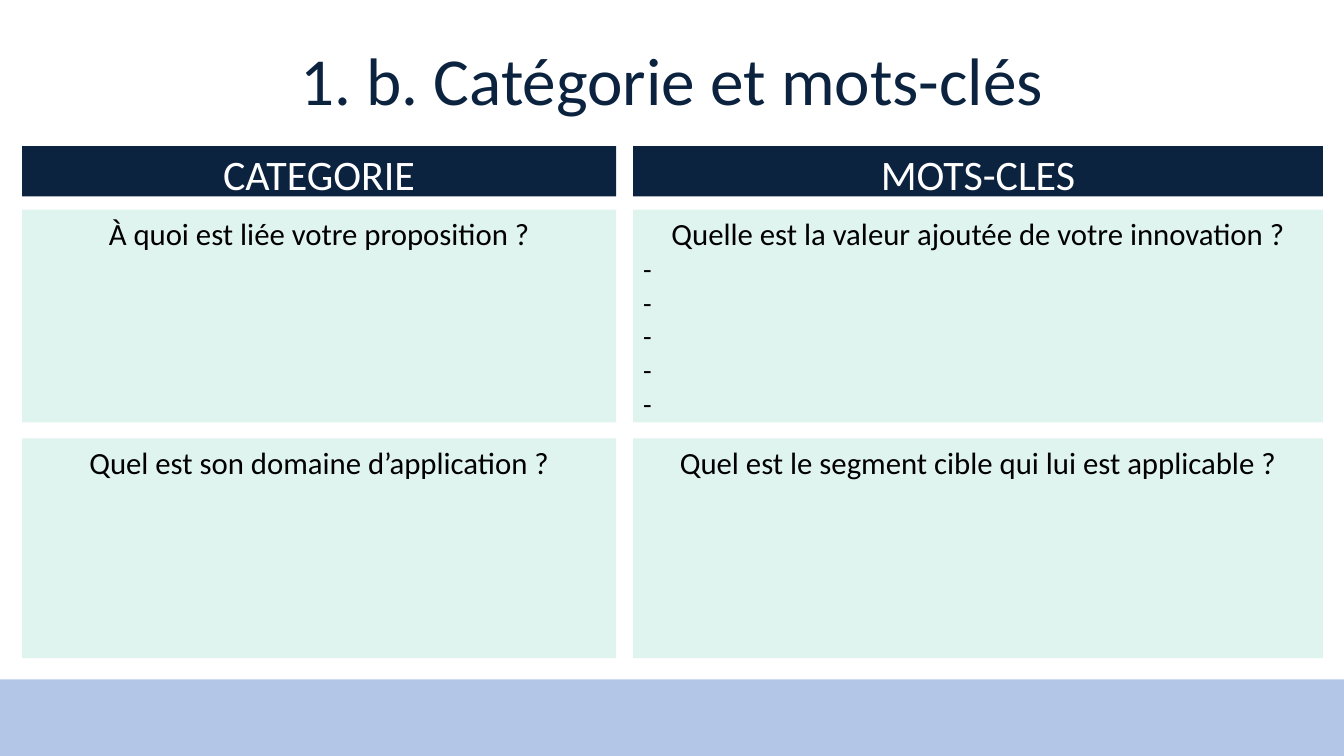
from lxml.etree import SubElement
from pptx import Presentation
from pptx.dml.color import RGBColor
from pptx.enum.shapes import MSO_SHAPE as Preset
from pptx.enum.text import MSO_ANCHOR as Anchor, MSO_AUTO_SIZE as AutoSize, PP_ALIGN as Align
from pptx.oxml.ns import qn
from pptx.util import Inches, Pt

TITLE = "1. b. Catégorie et mots-clés"
COLUMNS = [
    {"left": 0.22, "width": 5.89, "header": "CATEGORIE", "header_width": 2.7,
     "panels": [("À quoi est liée votre proposition ?", 0, 0.77),
                ("Quel est son domaine d’application ?", 0, 1.68)]},
    {"left": 6.28, "width": 6.84, "header": "MOTS-CLES", "header_width": 3.2,
     "panels": [("Quelle est la valeur ajoutée de votre innovation ?", 5, 2.15),
                ("Quel est le segment cible qui lui est applicable ?", 0, 1.18)]},
]
ROWS = [(2.08, 2.11), (4.35, 2.18)]
HEADER_TOP, HEADER_HEIGHT = 1.45, 0.5
SLIDE_WIDTH, SLIDE_HEIGHT = 13.33, 7.5
BAND_TOP = 6.74
NAVY, MINT, BLUE, WHITE, BLACK = "0C2340", "E0F4EF", "8FAADC", "FFFFFF", "000000"
FONT = "Calibri"


def color(hex_string):
    return RGBColor.from_string(hex_string)


def add_rectangle(slide, left, top, width, height, fill):
    shape = slide.shapes.add_shape(
        Preset.RECTANGLE, Inches(left), Inches(top), Inches(width), Inches(height))
    shape.shadow.inherit = False
    shape.fill.solid()
    shape.fill.fore_color.rgb = color(fill)
    shape.line.fill.background()
    return shape


def write(paragraph, text, size=22, fill=BLACK, align=Align.CENTER):
    paragraph.alignment = align
    run = paragraph.add_run()
    run.text = text
    run.font.name = FONT
    run.font.size = Pt(size)
    run.font.color.rgb = color(fill)


def add_text(slide, text, left, top, width, height, **text_format):
    box = slide.shapes.add_textbox(Inches(left), Inches(top), Inches(width), Inches(height))
    frame = box.text_frame
    frame.word_wrap = True
    frame.auto_size = AutoSize.SHAPE_TO_FIT_TEXT
    write(frame.paragraphs[0], text, **text_format)
    return frame


def add_band(slide):
    band = add_rectangle(slide, 0, BAND_TOP, SLIDE_WIDTH, SLIDE_HEIGHT - BAND_TOP, BLUE)
    fill_color = next(band.element.spPr.iter(qn("a:srgbClr")))
    SubElement(fill_color, qn("a:alpha")).set("val", "67000")


def add_title(slide):
    title = slide.shapes.title
    title.left, title.top = Inches(0), Inches(0.11)
    title.width, title.height = Inches(SLIDE_WIDTH), Inches(1.45)
    title.text_frame.vertical_anchor = Anchor.MIDDLE
    paragraph = title.text_frame.paragraphs[0]
    paragraph.line_spacing = 0.9
    write(paragraph, TITLE, size=48, fill=NAVY)


def add_column(slide, column):
    left, width = column["left"], column["width"]
    for (top, height), (question, dashes, text_height) in zip(ROWS, column["panels"]):
        add_rectangle(slide, left, top, width, height, MINT)
        frame = add_text(slide, question, left, top, width, text_height)
        for _ in range(dashes):
            write(frame.add_paragraph(), "-", size=20, align=Align.LEFT)
    add_rectangle(slide, left, HEADER_TOP, width, HEADER_HEIGHT, NAVY)
    header_left = left + (width - column["header_width"]) / 2
    add_text(slide, column["header"], header_left, HEADER_TOP - 0.03,
             column["header_width"], 0.61, size=30, fill=WHITE)


def main():
    presentation = Presentation()
    presentation.slide_width = Inches(SLIDE_WIDTH)
    presentation.slide_height = Inches(SLIDE_HEIGHT)
    slide = presentation.slides.add_slide(presentation.slide_layouts[5])
    slide.background.fill.solid()
    slide.background.fill.fore_color.rgb = color(WHITE)
    add_band(slide)
    for column in COLUMNS:
        add_column(slide, column)
    add_title(slide)
    presentation.save("out.pptx")


if __name__ == "__main__":
    main()
